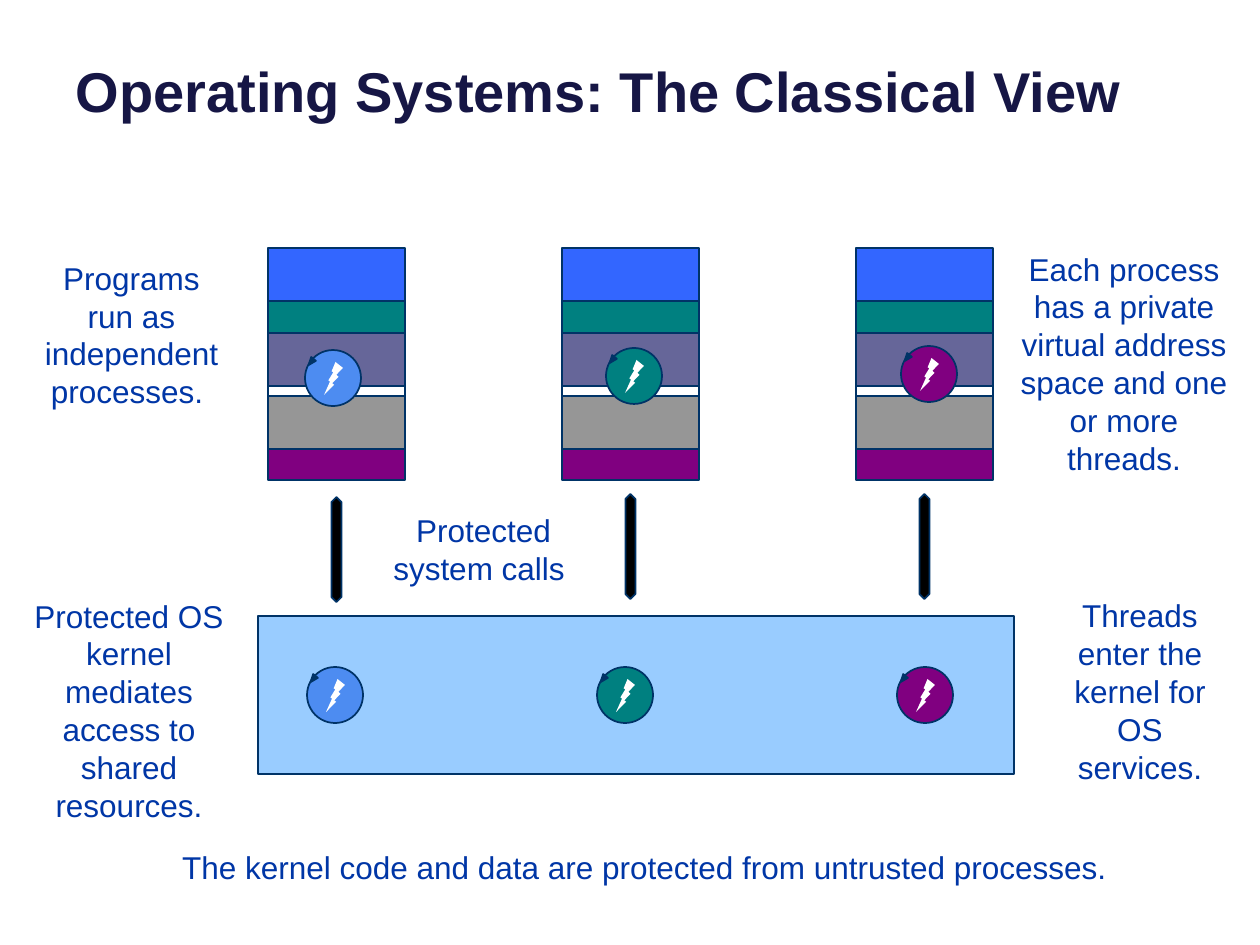
from pptx import Presentation
from pptx.dml.color import RGBColor
from pptx.enum.shapes import MSO_SHAPE
from pptx.enum.text import MSO_ANCHOR, MSO_AUTO_SIZE, PP_ALIGN
from pptx.util import Emu, Pt

EMU_PER_PX = 914400 / 126
FONT = "Arial"
COLORS = {
    "title": "161645", "text": "0036A6", "outline": "003367",
    "blue": "3366FF", "teal": "008080", "slate": "666699",
    "white": "FFFFFF", "gray": "969696", "purple": "800080",
    "kernel": "99CCFF", "sky": "4D8CF1", "black": "000000",
}

# Address space segments from top to bottom: colour, height
SEGMENTS = [("blue", 53), ("teal", 32), ("slate", 53),
            ("white", 10), ("gray", 53), ("purple", 31)]
PROCESS_LEFT, PROCESS_TOP, PROCESS_WIDTH, PROCESS_STEP = 268, 248, 137, 294

# Per process: thread colour, arrow top, thread in process, thread in kernel
PROCESSES = [("sky", 497, (305, 350), (307, 667)),
             ("teal", 494, (606, 348), (597, 667)),
             ("purple", 494, (901, 346), (897, 667))]

LABELS = [
    (["Programs run as", "independent processes. "], (32, 252, 199, 165)),
    (["Protected system calls "], (357, 504, 253, 90)),
    (["Protected OS kernel mediates access to shared resources."],
     (20, 589, 218, 242)),
    (["Threads enter the kernel for OS services."], (1052, 589, 176, 204)),
    (["Each process has a private virtual address space and one or more "
      "threads."], (998, 242, 252, 242)),
]
FOOTNOTE = "The kernel code and data are protected from untrusted processes."


def px(n):
    return Emu(round(n * EMU_PER_PX))


def color(name):
    return RGBColor.from_string(COLORS[name])


def format_runs(tf, size, name, bold=False):
    for p in tf.paragraphs:
        for r in p.runs:
            r.font.name = FONT
            r.font.size = Pt(size)
            r.font.bold = bold
            r.font.color.rgb = color(name)


def add_shape(shapes, kind, box, fill, outlined=True):
    sp = shapes.add_shape(kind, *map(px, box))
    sp.shadow.inherit = False
    sp.fill.solid()
    sp.fill.fore_color.rgb = color(fill)
    if outlined:
        sp.line.color.rgb = color("outline")
        sp.line.width = Pt(1)
    else:
        sp.line.fill.background()
    return sp


def add_title(slide, text):
    title = slide.shapes.title
    title.left, title.top, title.width, title.height = map(
        px, (63, -84, 1134, 214))
    tf = title.text_frame
    tf.text = text
    tf.auto_size = MSO_AUTO_SIZE.NONE
    tf.vertical_anchor = MSO_ANCHOR.BOTTOM
    tf.paragraphs[0].alignment = PP_ALIGN.LEFT
    format_runs(tf, 32, "title", bold=True)


def add_process(slide, left):
    top = PROCESS_TOP
    for fill, height in SEGMENTS:
        add_shape(slide.shapes, MSO_SHAPE.FLOWCHART_PROCESS,
                  (left, top, PROCESS_WIDTH, height), fill)
        top += height


def add_call_arrow(slide, center, top):
    arrow = add_shape(slide.shapes, MSO_SHAPE.UP_DOWN_ARROW,
                      (center - 5, top, 10, 105), "black")
    arrow.adjustments[0] = 0.5
    arrow.adjustments[1] = 2


def add_thread(slide, left, top, fill):
    """Group a disc, a mirrored bolt and a small arrowhead on the rim."""
    shapes = slide.shapes.add_group_shape().shapes
    add_shape(shapes, MSO_SHAPE.OVAL, (left, top, 56, 56), fill)
    bolt = add_shape(shapes, MSO_SHAPE.LIGHTNING_BOLT,
                     (left + 19, top + 12, 19, 33), "white", outlined=False)
    bolt._element.spPr.get_or_add_xfrm().set("flipH", "1")
    head = add_shape(shapes, MSO_SHAPE.ISOSCELES_TRIANGLE,
                     (left + 3, top + 8, 6, 8), "outline")
    head.rotation = 219


def add_label(slide, lines, box, wrap=True):
    tf = slide.shapes.add_textbox(*map(px, box)).text_frame
    tf.text = "\n".join(lines)
    tf.word_wrap = wrap
    tf.auto_size = MSO_AUTO_SIZE.SHAPE_TO_FIT_TEXT
    tf.vertical_anchor = MSO_ANCHOR.MIDDLE
    for p in tf.paragraphs:
        p.alignment = PP_ALIGN.CENTER
    format_runs(tf, 18, "text")


def main():
    prs = Presentation()
    prs.slide_width, prs.slide_height = px(1260), px(945)
    slide = prs.slides.add_slide(prs.slide_layouts[5])
    add_title(slide, "Operating Systems: The Classical View")
    add_shape(slide.shapes, MSO_SHAPE.FLOWCHART_PROCESS,
              (258, 616, 756, 158), "kernel")
    for i, (fill, arrow_top, *threads) in enumerate(PROCESSES):
        left = PROCESS_LEFT + i * PROCESS_STEP
        add_process(slide, left)
        add_call_arrow(slide, left + PROCESS_WIDTH / 2, arrow_top)
        for x, y in threads:
            add_thread(slide, x, y, fill)
    for lines, box in LABELS:
        add_label(slide, lines, box)
    add_label(slide, [FOOTNOTE], (165, 842, 959, 50), wrap=False)
    prs.save("out.pptx")


if __name__ == "__main__":
    main()
